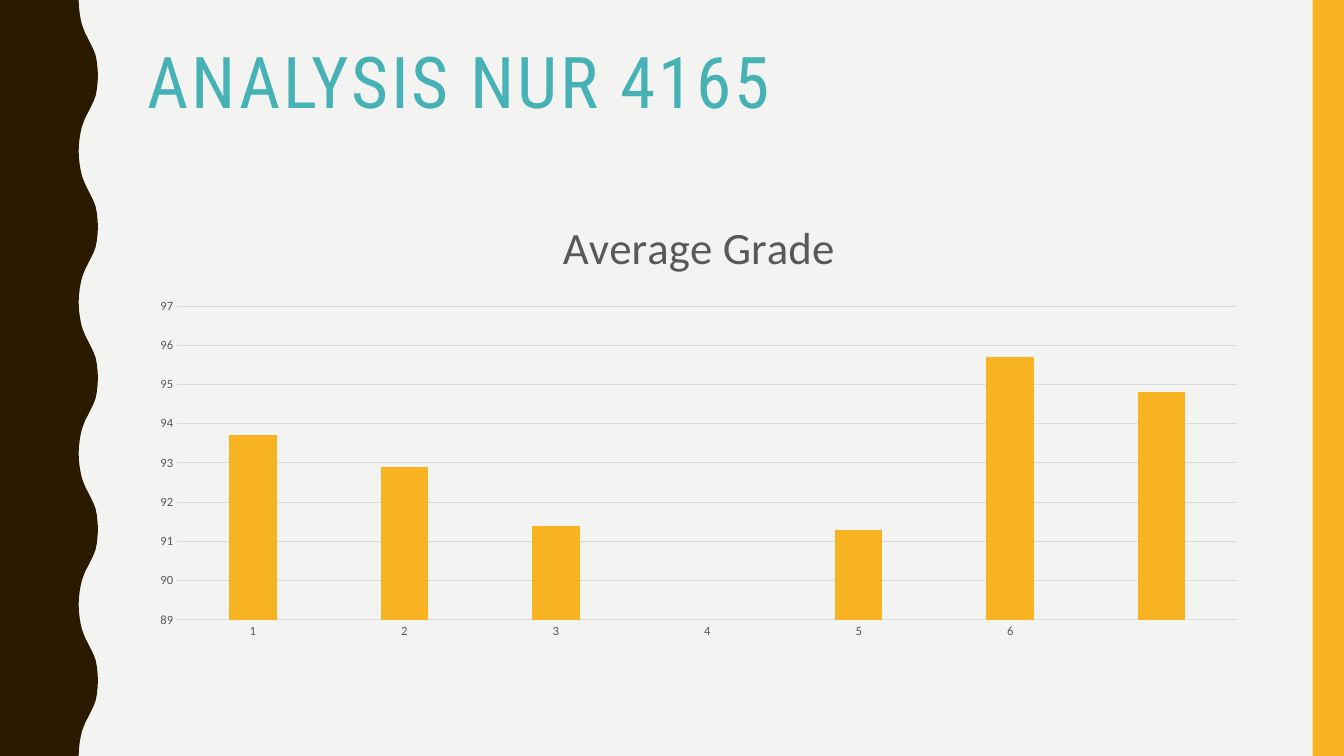
from lxml import etree
from pptx import Presentation
from pptx.chart.data import CategoryChartData
from pptx.dml.color import RGBColor
from pptx.enum.chart import XL_CHART_TYPE, XL_TICK_MARK
from pptx.enum.shapes import MSO_SHAPE
from pptx.enum.text import MSO_ANCHOR
from pptx.oxml import parse_xml
from pptx.oxml.ns import nsdecls
from pptx.util import Pt

COLUMNS = XL_CHART_TYPE.COLUMN_CLUSTERED
NO_TICK = XL_TICK_MARK.NONE
RECTANGLE = MSO_SHAPE.RECTANGLE
TOP = MSO_ANCHOR.TOP

WIDTH, HEIGHT = 960, 540
COLORS = {"paper": "F3F3F2", "brown": "2A1A00", "amber": "F8B323",
          "teal": "46B2B5", "gray": "595959", "grid": "D9D9D9"}
GRADES = {"1": 93.7, "2": 92.9, "3": 91.4, "4": None, "5": 91.3, "6": 95.7, "": 94.8}
WAVES = 5
CREST = [(56.2, 0), (56.4, 5), (57, 10), (57.8, 14.5), (58.7, 18), (59.8, 21),
         (61, 24), (62.6, 27), (64.1, 30), (65.6, 33), (67, 36), (68.3, 39.5),
         (69.2, 44), (69.7, 49), (70, 54)]


def color(name):
    """Return the named colour."""
    return RGBColor.from_string(COLORS[name])


def paint(shape, name):
    """Fill a shape with a flat colour, without line or shadow."""
    shape.fill.solid()
    shape.fill.fore_color.rgb = color(name)
    shape.line.fill.background()
    shape.shadow.inherit = False


def style_font(font, size, name, face="Calibri"):
    """Set the size, colour and typeface of a font."""
    font.size, font.name, font.bold = Pt(size), face, False
    font.color.rgb = color(name)


def add_text(page, box, text, *, size, ink, face, line_spacing=1, tracking=0):
    """Place one paragraph of text in a box."""
    frame = page.shapes.add_textbox(*map(Pt, box)).text_frame
    frame.word_wrap = True
    frame.vertical_anchor = TOP
    para = frame.paragraphs[0]
    para.line_spacing = line_spacing
    span = para.add_run()
    span.text = text
    style_font(span.font, size, ink, face)
    span.font._element.set("spc", str(tracking * 100))


def add_wavy_band(page, box):
    """Draw the band whose right edge is a row of equal waves."""
    left, top, _, height = box
    period = height / WAVES
    wave = CREST + [(x, 2 * CREST[-1][1] - y) for x, y in CREST[-2::-1]]
    edge = [(left + x, top + number * period + y)
            for number in range(WAVES) for x, y in wave]
    outline = edge + [(left, top + height)]
    builder = page.shapes.build_freeform(Pt(left), Pt(top))
    builder.add_line_segments([(Pt(x), Pt(y)) for x, y in outline])
    paint(builder.convert_to_shape(), "brown")


def add_side_bar(page, box):
    """Draw the plain bar along the right edge."""
    paint(page.shapes.add_shape(RECTANGLE, *map(Pt, box)), "amber")


def style_axis(axis):
    """Give an axis its small gray labels and no ticks."""
    axis.major_tick_mark = axis.minor_tick_mark = NO_TICK
    style_font(axis.tick_labels.font, 9, "gray")


def style_line(line):
    """Make a line thin and light gray."""
    line.width = Pt(0.75)
    line.color.rgb = color("grid")


def fix_plot_area(chart, **fractions):
    """Set the inner plot area as fractions of the chart."""
    area = chart._chartSpace.chart.plotArea
    for old in area.findall("{*}layout"):
        area.remove(old)
    layout = parse_xml(f"<c:layout {nsdecls('c')}><c:manualLayout/></c:layout>")
    settings = {"layoutTarget": "inner", "xMode": "edge", "yMode": "edge", **fractions}
    for tag, value in settings.items():
        etree.SubElement(layout[0], f"{{{layout.nsmap['c']}}}{tag}", val=str(value))
    area.insert(0, layout)


def add_grade_chart(page, box):
    """Place the column chart of average grades."""
    data = CategoryChartData()
    data.categories = list(GRADES)
    data.add_series("Average Grade", GRADES.values())
    chart = page.shapes.add_chart(COLUMNS, *map(Pt, box), data).chart
    style_font(chart.font, 10, "gray")
    chart.has_legend = False
    chart.has_title = True
    chart.chart_title.include_in_layout = False
    span = chart.chart_title.text_frame.paragraphs[0].add_run()
    span.text = "Average Grade"
    style_font(span.font, 32, "gray")

    plot = chart.plots[0]
    plot.gap_width, plot.overlap, plot.vary_by_categories = 219, -27, False
    columns = plot.series[0].format
    columns.fill.solid()
    columns.fill.fore_color.rgb = color("amber")

    style_axis(chart.category_axis)
    style_line(chart.category_axis.format.line)
    scale = chart.value_axis
    style_axis(scale)
    scale.minimum_scale, scale.maximum_scale, scale.major_unit = 89, 97, 1
    scale.format.line.fill.background()
    style_line(scale.major_gridlines.format.line)
    fix_plot_area(chart, x=0.035, y=0.248, w=0.945, h=0.69)


def build_analysis_slide(deck, box):
    """Build the grade analysis slide inside the given box."""
    left, top, width, height = box
    page = deck.slides.add_slide(deck.slide_layouts[6])
    page.background.fill.solid()
    page.background.fill.fore_color.rgb = color("paper")
    add_wavy_band(page, (left, top, 70, height))
    add_side_bar(page, (left + width - 22.4, top, 22.4, height))
    add_text(page, (left + 98.6, top + 30.2, 801.4, 117.4), "ANALYSIS NUR 4165",
             size=51, ink="teal", face="Roboto Condensed", line_spacing=0.9, tracking=2)
    add_grade_chart(page, (left + 98.6, top + 138.2, 801.4, 324.7))


def main():
    """Create and save the deck."""
    deck = Presentation()
    deck.slide_width, deck.slide_height = Pt(WIDTH), Pt(HEIGHT)
    build_analysis_slide(deck, (0, 0, WIDTH, HEIGHT))
    deck.save("out.pptx")


if __name__ == "__main__":
    main()
